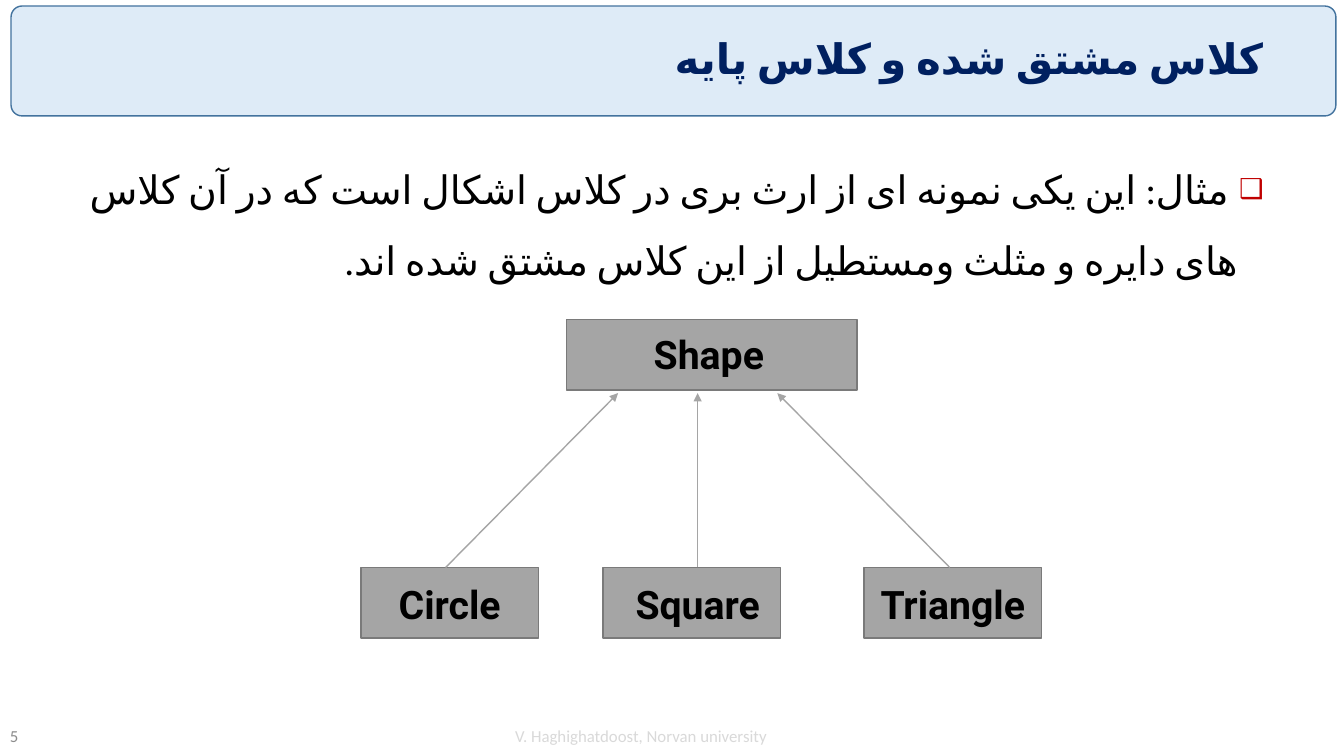
from lxml.etree import SubElement
from pptx import Presentation
from pptx.dml.color import RGBColor
from pptx.enum.shapes import MSO_CONNECTOR, MSO_SHAPE
from pptx.enum.text import MSO_ANCHOR as ANCHOR, PP_ALIGN as ALIGN
from pptx.oxml.ns import qn
from pptx.util import Inches, Pt

BOX_FILL, BOX_LINE = "A5A5A5", "7A7A7A"


def color(hex_text):
    return RGBColor.from_string(hex_text)


def write(shape, text, font, align, anchor=ANCHOR.MIDDLE, spacing=1.0, rtl=False):
    """Fill the shape with one formatted paragraph and return that paragraph."""
    frame = shape.text_frame
    frame.word_wrap = True
    frame.vertical_anchor = anchor
    paragraph = frame.paragraphs[0]
    paragraph.alignment = align
    paragraph.line_spacing = spacing
    run = paragraph.add_run()
    run.text = text
    formats = {"name": "Calibri", **font}
    run.font.color.rgb = color(formats.pop("color"))
    for key, value in formats.items():
        setattr(run.font, key, value)
    if rtl:
        paragraph._p.get_or_add_pPr().set("rtl", "1")
        run_props = run._r.get_or_add_rPr()
        run_props.set("lang", "fa-IR")
        SubElement(run_props, qn("a:cs"), typeface=formats["name"])
    return paragraph


def add_text(slide, box, *args, **options):
    return write(slide.shapes.add_textbox(*map(Inches, box)), *args, **options)


def add_panel(slide, kind, box, fill, line):
    panel = slide.shapes.add_shape(kind, *map(Inches, box))
    panel.shadow.inherit = False
    panel.fill.solid()
    panel.fill.fore_color.rgb = color(fill)
    panel.line.color.rgb = color(line)
    panel.line.width = Pt(1)
    return panel


def add_header(slide, box, title):
    left, top, width, height = box
    banner = add_panel(slide, MSO_SHAPE.ROUNDED_RECTANGLE, box, "DEEBF7", "43739E")
    banner.adjustments[0] = 0.1
    add_text(slide, (left + 0.13, top + 0.09, width - 0.75, height - 0.19), title,
             {"size": Pt(30), "bold": True, "color": "002060"},
             ALIGN.RIGHT, spacing=0.9, rtl=True)


def add_example(slide, box, text):
    """Right-to-left paragraph with a red box bullet."""
    paragraph = add_text(slide, box, text, {"size": Pt(28), "color": "000000"},
                         ALIGN.RIGHT, ANCHOR.TOP, spacing=1.5, rtl=True)
    paragraph.space_before = Pt(10)
    props = paragraph._p.get_or_add_pPr()
    props.set("marL", str(Inches(0.25)))
    props.set("indent", str(-Inches(0.25)))
    bullet_color = SubElement(props, qn("a:buClr"))
    SubElement(bullet_color, qn("a:srgbClr"), val="C00000")
    SubElement(props, qn("a:buSzPct"), val="70000")
    SubElement(props, qn("a:buFont"), typeface="Calibri")
    SubElement(props, qn("a:buChar"), char="❑")


def add_class_box(slide, box, name, shift):
    """Class rectangle whose label sits off centre by shift (x, y)."""
    class_box = add_panel(slide, MSO_SHAPE.RECTANGLE, box, BOX_FILL, BOX_LINE)
    dx, dy = shift
    margins = {"margin_left": max(2 * dx, 0), "margin_right": max(-2 * dx, 0),
               "margin_top": 2 * dy, "margin_bottom": 0}
    for key, value in margins.items():
        setattr(class_box.text_frame, key, Inches(value))
    write(class_box, name, {"name": "Roboto", "size": Pt(28), "bold": True,
                            "color": "000000"}, ALIGN.CENTER, spacing=0.8)


def add_arrow(slide, start, end):
    arrow = slide.shapes.add_connector(MSO_CONNECTOR.STRAIGHT, *map(Inches, start + end))
    arrow.line.color.rgb = color(BOX_FILL)
    arrow.line.width = Pt(1)
    SubElement(arrow.line._get_or_add_ln(), qn("a:tailEnd"), type="triangle")
    SubElement(arrow._element.spPr, qn("a:effectLst"))


def add_class_tree(slide, box):
    left, top, width, height = box
    box_height, child_width = 0.7, 1.76
    child_top = top + height - box_height
    add_class_box(slide, (left + 2.04, top, 2.88, box_height), "Shape", (-0.03, 0.03))
    children = [("Circle", 0, 0), ("Square", 2.4, 0.06),
                ("Triangle", width - child_width, 0)]
    for name, offset, shift in children:
        add_class_box(slide, (left + offset, child_top, child_width, box_height),
                      name, (shift, 0.05))
    middle = left + 3.34
    for side in (-1, 0, 1):
        add_arrow(slide, (middle + side * 2.5, child_top),
                  (middle + side * 0.79, top + box_height + 0.03))


def add_footer(slide, box, credit, number):
    left, top, width, height = box
    add_text(slide, (left + 3.61, top, 5.5, height), credit,
             {"size": Pt(12), "color": "D9D9D9"}, ALIGN.CENTER)
    add_text(slide, (left, top, 0.71, height), number,
             {"size": Pt(12), "color": "8C8C8C"}, ALIGN.LEFT)


def main():
    deck = Presentation()
    deck.slide_width, deck.slide_height = Inches(13.33), Inches(7.5)
    slide = deck.slides.add_slide(deck.slide_layouts[6])
    add_header(slide, (0.11, 0.06, 13.14, 1.09), "کلاس مشتق شده و کلاس پایه")
    add_example(slide, (0.24, 1.36, 12.39, 5.65),
                " مثال: این یکی نمونه ای از ارث بری در کلاس اشکال است که در آن کلاس "
                "های دایره و مثلث ومستطیل از این کلاس مشتق شده اند.")
    add_class_tree(slide, (3.58, 3.17, 6.75, 3.16))
    add_footer(slide, (0, 7.1, 13.33, 0.4), "V. Haghighatdoost, Norvan university", "5")
    deck.save("out.pptx")


if __name__ == "__main__":
    main()
